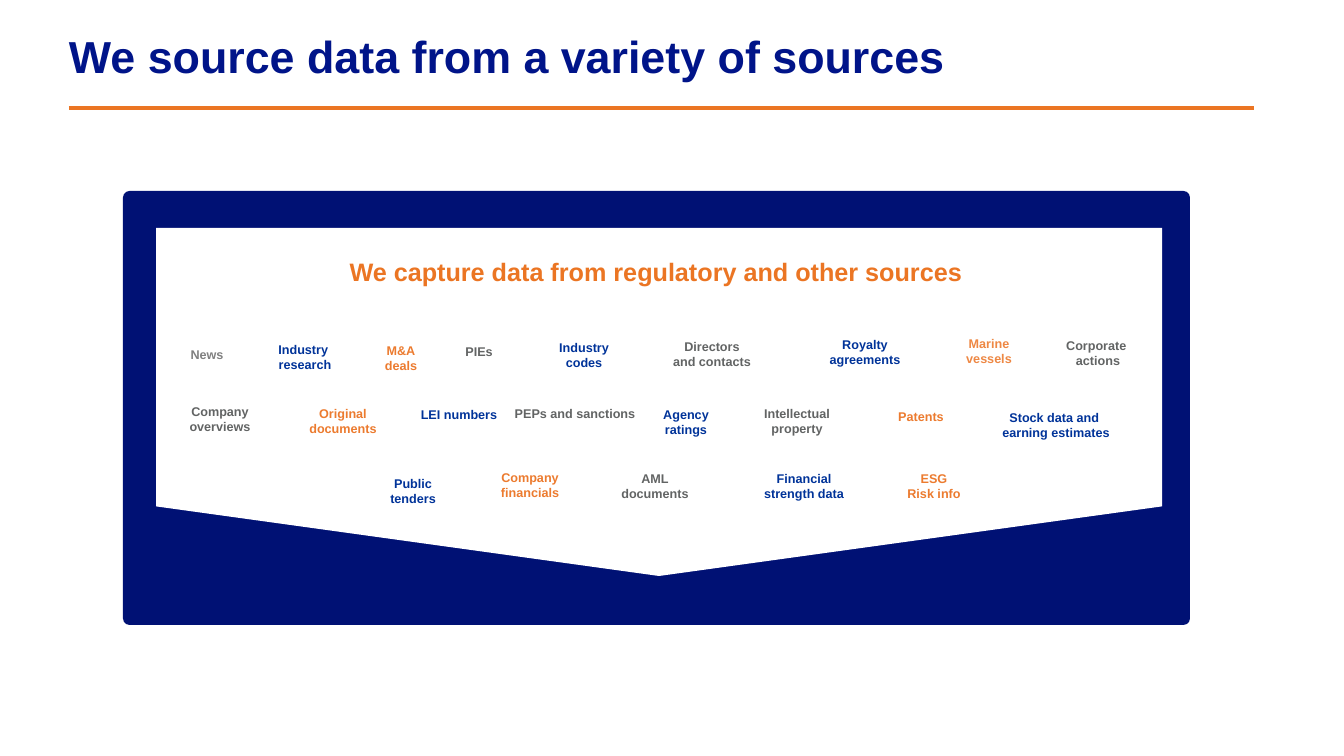
"""Build the slide on the variety of data sources."""
from lxml.etree import SubElement
from pptx import Presentation
from pptx.dml.color import RGBColor
from pptx.enum.shapes import MSO_CONNECTOR, MSO_SHAPE
from pptx.enum.text import MSO_ANCHOR, MSO_AUTO_SIZE, PP_ALIGN
from pptx.oxml.ns import qn
from pptx.util import Pt

TITLE = "We source data from a variety of sources"
HEAD = "We capture data from regulatory and other sources"
COLORS = {"title": "001489", "rule": "EB7523", "panel": "001174", "white": "FFFFFF",
          "blue": "003399", "orange": "EC7B2F", "peach": "EE8844",
          "dark": "626464", "gray": "808080"}
# Each label: text, colour, centre x, top y, width
LABELS = [
    ("News", "gray", 207, 342, 129),
    ("Industry \nresearch", "blue", 305, 337, 138),
    ("M&A\ndeals", "orange", 401, 338, 129),
    ("PIEs", "dark", 479, 339, 129),
    ("Industry\ncodes", "blue", 584, 335, 129),
    ("Directors\nand contacts", "dark", 712, 334, 172),
    ("Royalty\nagreements", "blue", 865, 332, 170),
    ("Marine\nvessels", "peach", 989, 331, 159),
    ("Corporate \nactions", "dark", 1098, 333, 149),
    ("Company\noverviews", "dark", 220, 399, 159),
    ("Original\ndocuments", "orange", 343, 401, 162),
    ("LEI numbers", "blue", 459, 402, 137),
    ("PEPs and sanctions", "dark", 575, 401, 155),
    ("Agency\nratings", "blue", 686, 402, 129),
    ("Intellectual\nproperty", "dark", 797, 401, 161),
    ("Patents", "orange", 921, 404, 129),
    ("Stock data and \nearning estimates", "blue", 1056, 405, 235),
    ("Public\ntenders", "blue", 413, 471, 129),
    ("Company\nfinancials", "orange", 530, 465, 151),
    ("AML\ndocuments", "dark", 655, 466, 160),
    ("Financial\nstrength data", "blue", 804, 466, 178),
    ("ESG\nRisk info", "orange", 934, 466, 144),
]
HEIGHTS = {1: 39, 2: 63}


def px(*vals):
    return [round(v * 914400 / 100.8) for v in vals]


def color(name):
    return RGBColor.from_string(COLORS[name])


def add_text(slide, text, box, size, tone, align=PP_ALIGN.CENTER):
    frame = slide.shapes.add_textbox(*px(*box)).text_frame
    frame.word_wrap = True
    frame.vertical_anchor = MSO_ANCHOR.TOP
    frame.text = text
    for para in frame.paragraphs:
        para.alignment = align
        for run in para.runs:
            font = run.font
            font.name, font.size, font.bold = "Arial", Pt(size), True
            font.color.rgb = color(tone)
    return frame


def add_block(slide, kind, box, tone, adjust, turn=0):
    shape = slide.shapes.add_shape(kind, *px(*box))
    shape.shadow.inherit = False
    shape.fill.solid()
    shape.fill.fore_color.rgb = color(tone)
    shape.line.fill.background()
    shape.adjustments[0] = adjust
    shape.rotation = turn


def main():
    deck = Presentation()
    deck.slide_width, deck.slide_height = px(1344, 756)
    slide = deck.slides.add_slide(deck.slide_layouts[6])

    rule = slide.shapes.add_connector(MSO_CONNECTOR.STRAIGHT, *px(69, 108, 1254, 108))
    rule.line.color.rgb = color("rule")
    rule.line.width = Pt(2.25)
    SubElement(rule._element.spPr, qn("a:effectLst"))

    title = add_text(slide, TITLE, (59, 30, 1194, 70), 32, "title", PP_ALIGN.LEFT)
    title.paragraphs[0].line_spacing = 0.9

    add_block(slide, MSO_SHAPE.ROUNDED_RECTANGLE, (123, 191, 1067, 434), "panel", 0.015)
    add_block(slide, MSO_SHAPE.PENTAGON, (485, -101, 348, 1006), "white", 0.2, 90)
    head = add_text(slide, HEAD, (151, 251, 1010, 55), 18, "rule")
    head.auto_size = MSO_AUTO_SIZE.SHAPE_TO_FIT_TEXT

    for text, tone, mid, top, width in LABELS:
        high = HEIGHTS[text.count("\n") + 1]
        label = add_text(slide, text, (mid - width / 2, top, width, high), 9, tone)
        label.auto_size = MSO_AUTO_SIZE.SHAPE_TO_FIT_TEXT

    deck.save("out.pptx")


if __name__ == "__main__":
    main()
